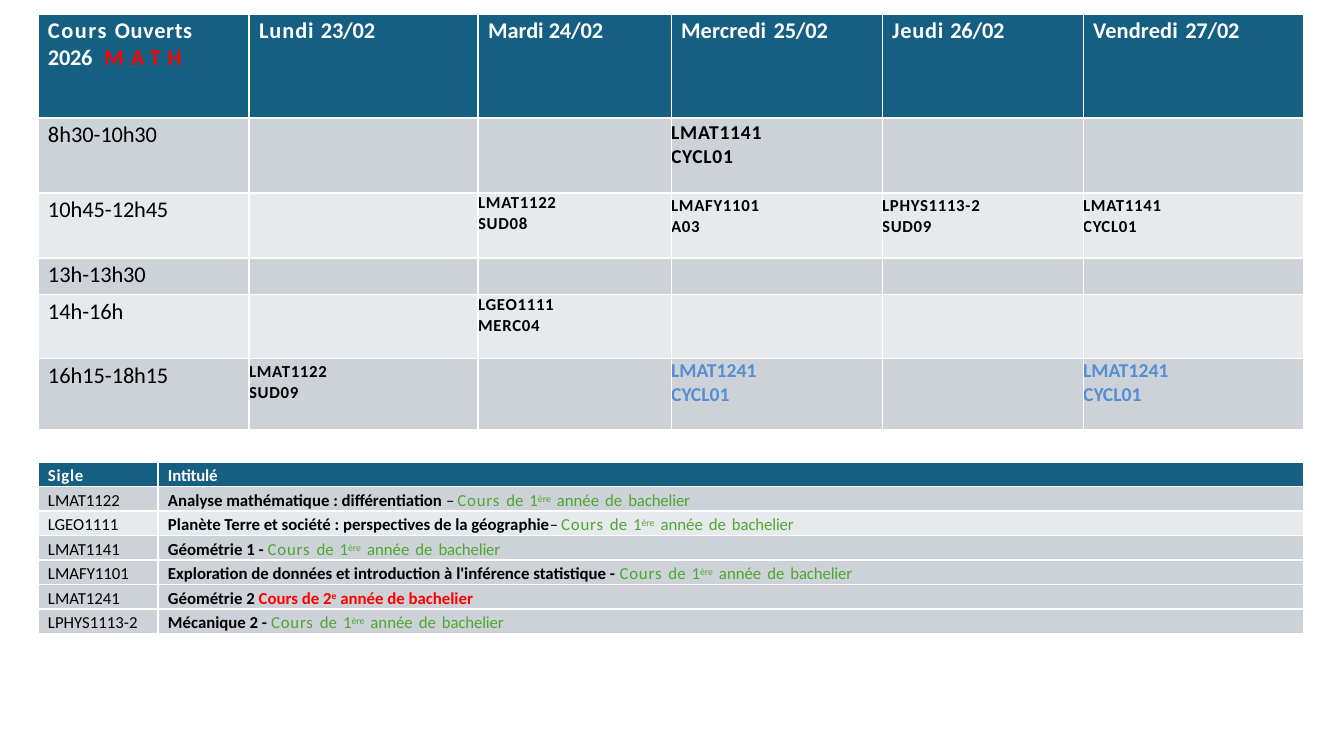
"""Build the weekly timetable of open mathematics courses with its course list."""
from dataclasses import dataclass

from pptx import Presentation
from pptx import util as u
from pptx.dml.color import RGBColor
from pptx.enum import text

SCALE = 914400 / 100.8


@dataclass(frozen=True)
class Theme:
    font: str = "Calibri"
    header: str = "155F82"
    dark_band: str = "CCD2D7"
    light_band: str = "E7EAEC"
    white: str = "FFFFFF"
    black: str = "000000"
    red: str = "FF0000"
    green: str = "4EA72D"
    blue: str = "558ED5"
    heading: int = 16
    large: int = 14
    small: int = 12
    word_gap: float = 1.5


T = Theme()


@dataclass(frozen=True)
class Run:
    text: str
    spacing: float = 0
    color: str | None = None
    bold: bool | None = None
    raised: int = 0


@dataclass(frozen=True)
class Style:
    size: int
    color: str = T.black
    bold: bool = False
    left: int = 0
    top: int = 0
    right: int = 0


@dataclass(frozen=True)
class Lesson:
    row: int
    col: int
    code: str
    room: str
    style: Style
    spacing: float = 0.5


@dataclass(frozen=True)
class Course:
    code: str
    title: str
    year: tuple[Run, ...]
    dash: bool = False
    light: bool = False


def px(n: int) -> u.Emu:
    return u.Emu(round(n * SCALE))


def first_year() -> tuple[Run, ...]:
    gap = Run(" ", T.word_gap, T.green, False)
    words = [
        [Run("Cours", 0.6, T.green, False)],
        [Run("de", 0, T.green, False)],
        [Run("1", 0, T.green, False), Run("ère", 0, T.green, False, 24)],
        [Run("année", 0, T.green, False)],
        [Run("de", 0, T.green, False)],
        [Run("bachelier", -0.1, T.green, False)],
    ]
    runs = list(words[0])
    for word in words[1:]:
        runs += [gap, *word]
    return tuple(runs)


HEADING = Style(T.heading, T.white, True, left=10, top=3)
CORNER = Style(T.heading, T.white, True, left=10, top=3, right=30)
HOUR = Style(T.heading, left=10, top=3)
LARGE = Style(T.large, bold=True, top=3)
SMALL = Style(T.small, bold=True, top=3)
SMALL_TOP = Style(T.small, bold=True)
SECOND_YEAR = Style(T.large, T.blue, True)
LIST_HEADING = Style(T.small, T.white, True, left=10, top=4)
LIST_CODE = Style(T.small, left=10, top=4)
LIST_TITLE = Style(T.small, bold=True, left=10, top=4)

CORNER_RUNS = [Run("Cours ", 1.1), Run("Ouverts ", 0.5), Run("2026", -0.2), Run(" MATH", 5, T.red)]
DAYS = [("Lundi", 0.7, "23/02", 0.7), ("Mardi", 0, "24/02", 0),
        ("Mercredi", 0.1, "25/02", T.word_gap), ("Jeudi", 0.6, "26/02", 0.6),
        ("Vendredi", 0.1, "27/02", T.word_gap)]
HOURS = [("8h30-", "10h30"), ("10h45-", "12h45"), ("13h-", "13h30"),
         ("14h-", "16h"), ("16h15-", "18h15")]
LESSONS = [
    Lesson(1, 3, "LMAT1141", "CYCL01", LARGE),
    Lesson(2, 2, "LMAT1122", "SUD08", SMALL_TOP),
    Lesson(2, 3, "LMAFY1101", "A03", SMALL),
    Lesson(2, 4, "LPHYS1113-2", "SUD09", SMALL),
    Lesson(2, 5, "LMAT1141", "CYCL01", SMALL),
    Lesson(4, 2, "LGEO1111", "MERC04", SMALL_TOP),
    Lesson(5, 1, "LMAT1122", "SUD09", SMALL),
    Lesson(5, 3, "LMAT1241", "CYCL01", SECOND_YEAR, 0),
    Lesson(5, 5, "LMAT1241", "CYCL01", SECOND_YEAR, 0),
]
FIRST = first_year()
SECOND = (Run("Cours de 2", color=T.red), Run("e", color=T.red, raised=30),
          Run(" année de bachelier", color=T.red))
COURSES = [
    Course("LMAT1122", "Analyse mathématique : différentiation ", FIRST, dash=True),
    Course("LGEO1111", "Planète Terre et société : perspectives de la géographie", FIRST,
           dash=True, light=True),
    Course("LMAT1141", "Géométrie 1 - ", FIRST),
    Course("LMAFY1101", "Exploration de données et introduction à l'inférence statistique - ", FIRST),
    Course("LMAT1241", "Géométrie 2 ", SECOND),
    Course("LPHYS1113-2", "Mécanique 2 - ", FIRST),
]


def add_run(p, run: Run) -> None:
    r = p.add_run()
    r.text = run.text
    if run.color:
        r.font.color.rgb = RGBColor.from_string(run.color)
    if run.bold is not None:
        r.font.bold = run.bold
    rPr = r.font._element
    if run.spacing:
        rPr.set("spc", str(round(run.spacing * 100)))
    if run.raised:
        rPr.set("baseline", str(run.raised * 1000))


def write(cell, style: Style, lines: list[list[Run]]) -> None:
    cell.margin_left, cell.margin_top = px(style.left), px(style.top)
    cell.margin_right = px(style.right)
    p = cell.text_frame.paragraphs[0]
    p.font.name, p.font.size, p.font.bold = T.font, u.Pt(style.size), style.bold
    p.font.color.rgb = RGBColor.from_string(style.color)
    for i, line in enumerate(lines):
        if i:
            p.add_line_break()
        for run in line:
            add_run(p, run)


def add_grid(s, left: int, top: int, widths: list[int], heights: list[int], fills: list[str]):
    frame = s.shapes.add_table(len(heights), len(widths), px(left), px(top),
                               px(sum(widths)), px(sum(heights)))
    table = frame.table
    table.horz_banding = False
    for column, width in zip(table.columns, widths):
        column.width = px(width)
    for row, height, fill in zip(table.rows, heights, fills):
        row.height = px(height)
        for cell in row.cells:
            cell.margin_left = cell.margin_right = cell.margin_top = cell.margin_bottom = 0
            cell.vertical_anchor = text.MSO_ANCHOR.TOP
            cell.fill.solid()
            cell.fill.fore_color.rgb = RGBColor.from_string(fill)
    return table


def add_timetable(s) -> None:
    fills = [T.header] + [T.light_band if i % 2 else T.dark_band for i in range(len(HOURS))]
    table = add_grid(s, 38, 14, [211, 229, 193, 211, 201, 220], [104, 75, 65, 37, 64, 71], fills)
    write(table.cell(0, 0), CORNER, [CORNER_RUNS])
    for col, (day, spacing, date, gap) in enumerate(DAYS, 1):
        write(table.cell(0, col), HEADING, [[Run(day, spacing), Run(" ", gap), Run(date, -0.1)]])
    for row, (start, end) in enumerate(HOURS, 1):
        write(table.cell(row, 0), HOUR, [[Run(start), Run(end, -0.1)]])
    for x in LESSONS:
        write(table.cell(x.row, x.col), x.style, [[Run(x.code, x.spacing)], [Run(x.room, x.spacing)]])


def add_course_list(s) -> None:
    fills = [T.header] + [T.light_band if c.light else T.dark_band for c in COURSES]
    table = add_grid(s, 38, 462, [120, 1145], [24] * len(fills), fills)
    write(table.cell(0, 0), LIST_HEADING, [[Run("Sigle", 0.5)]])
    write(table.cell(0, 1), LIST_HEADING, [[Run("Intitulé", -0.1)]])
    for row, c in enumerate(COURSES, 1):
        dash = [Run("– ", -0.6, bold=False)] if c.dash else []
        write(table.cell(row, 0), LIST_CODE, [[Run(c.code)]])
        write(table.cell(row, 1), LIST_TITLE, [[Run(c.title), *dash, *c.year]])


def main() -> None:
    prs = Presentation()
    prs.slide_width, prs.slide_height = u.Inches(13.33), u.Inches(7.5)
    s = prs.slides.add_slide(prs.slide_layouts[6])
    add_timetable(s)
    add_course_list(s)
    prs.save("out.pptx")


if __name__ == "__main__":
    main()
